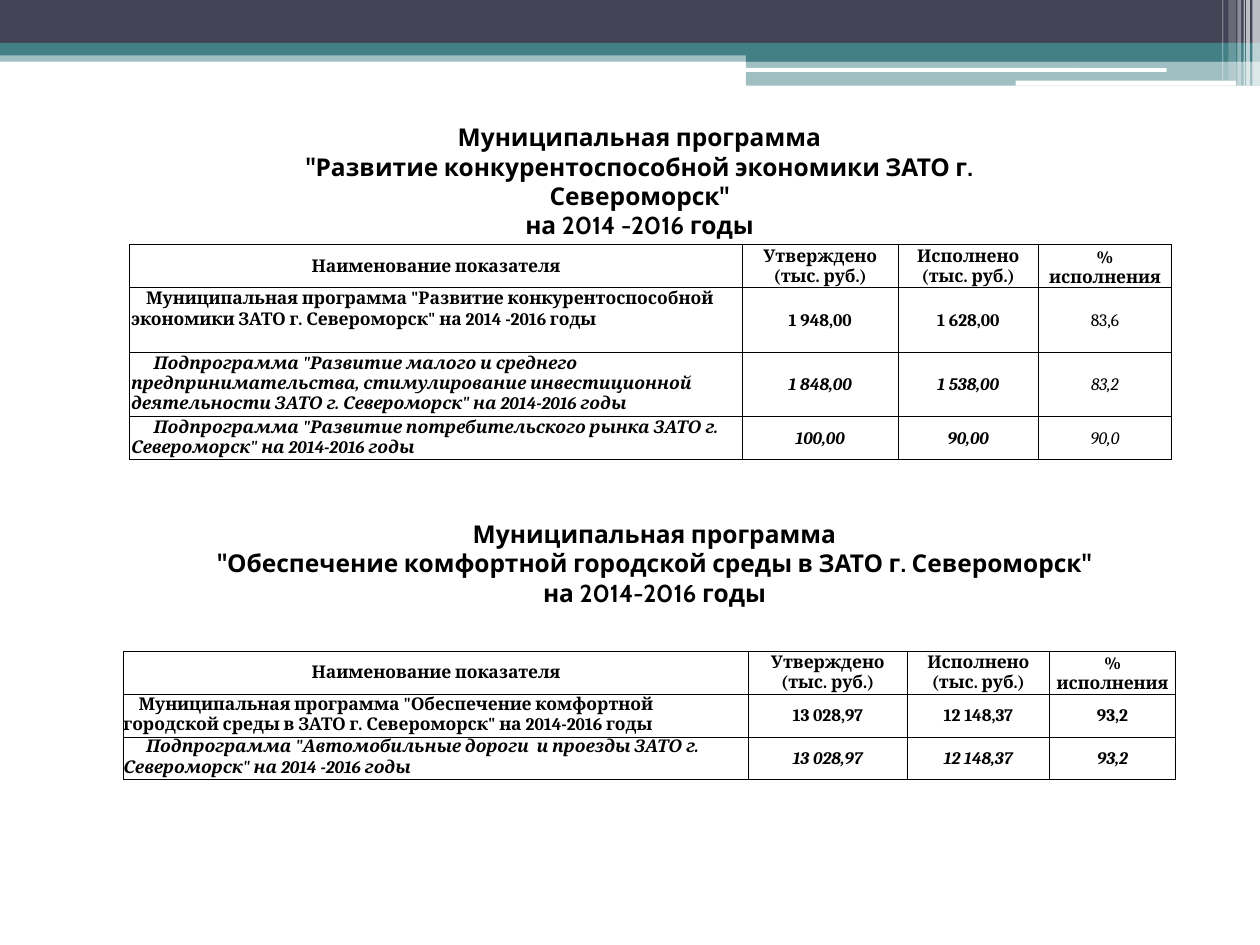
from dataclasses import dataclass

from lxml import etree
from pptx import Presentation
from pptx.dml.color import RGBColor
from pptx.enum.shapes import MSO_SHAPE
from pptx.enum.text import MSO_ANCHOR, PP_ALIGN
from pptx.oxml.ns import qn
from pptx.util import Inches, Pt

RECT, ROUND = MSO_SHAPE.RECTANGLE, MSO_SHAPE.ROUNDED_RECTANGLE
CENTER, LEFT = PP_ALIGN.CENTER, PP_ALIGN.LEFT
TOP, MIDDLE, BOTTOM = MSO_ANCHOR.TOP, MSO_ANCHOR.MIDDLE, MSO_ANCHOR.BOTTOM


@dataclass(frozen=True)
class Theme:
    dark: str = "424456"
    teal: str = "438086"
    white: str = "FFFFFF"
    ink: str = "000000"
    title_font: str = "Cabin"
    title_size: float = 14
    table_font: str = "Cambria"
    table_size: float = 10
    border: float = 0.5


theme = Theme()
deck = Presentation()
deck.slide_width, deck.slide_height = Inches(10), Inches(7.5)
page = deck.slides.add_slide(deck.slide_layouts[6])

# The page is a grid of 100 columns by 75 rows
COL, ROW = deck.slide_width / 100, deck.slide_height / 75


def grid(left, top, width, height):
    return [round(n * unit) for n, unit in zip((left, top, width, height), (COL, ROW) * 2)]


def style_text(frame, font, size, bold=True, italic=False, align=CENTER):
    for para in frame.paragraphs:
        para.alignment = align
        for span in para.runs:
            span.font.name, span.font.size = font, Pt(size)
            span.font.bold, span.font.italic = bold, italic
            span.font.color.rgb = RGBColor.from_string(theme.ink)


# Header bands: kind, place on the grid, colour, opacity in percent
bands = [
    (RECT, (0, 4, 100, 0.9), theme.teal, 50),
    (RECT, (0, 0, 100, 3.4), theme.dark, 100),
    (RECT, (0, 3.4, 100, 1), theme.teal, 100),
    (RECT, (59.2, 3.9, 40.8, 1), theme.teal, 100),
    (RECT, (59.2, 4.8, 40.8, 2), theme.teal, 50),
    (ROUND, (59.1, 5.4, 33.5, 0.3), theme.white, 100),
    (ROUND, (80.6, 6.4, 17.5, 0.4), theme.white, 100),
]
# Light stripes at the right edge: left, width, height, opacity
stripes = [
    (99.4, 0.6, 6.8, 65), (98.9, 0.3, 6.8, 65), (98.7, 0.1, 6.8, 60),
    (98.2, 0.3, 6.8, 40), (97.5, 0.6, 6.4, 20), (97, 0.1, 6.4, 30),
]
bands += [(RECT, (left, 0, width, height), theme.white, opacity)
          for left, width, height, opacity in stripes]

for kind, place, color, opacity in bands:
    band = page.shapes.add_shape(kind, *grid(*place))
    band.shadow.inherit = False
    band.line.fill.background()
    band.fill.solid()
    band.fill.fore_color.rgb = RGBColor.from_string(color)
    if opacity < 100:
        tint = band.fill._xPr.find(qn("a:solidFill"))[0]
        etree.SubElement(tint, qn("a:alpha")).set("val", str(opacity * 1000))

titles = [
    ((19.3, 9.2, 62.9, 8.1),
     'Муниципальная программа\n"Развитие конкурентоспособной экономики ЗАТО г. Североморск"\n'
     'на 2014 -2016 годы'),
    ((10.6, 40.7, 82.7, 8.1),
     'Муниципальная программа\n"Обеспечение комфортной городской среды в ЗАТО г. Североморск"\n'
     'на 2014-2016 годы'),
]
for place, text in titles:
    box = page.shapes.add_textbox(*grid(*place))
    box.text_frame.word_wrap = True
    box.text_frame.text = text
    style_text(box.text_frame, theme.title_font, theme.title_size)

header = ("Наименование показателя", "Утверждено\n(тыс. руб.)",
          "Исполнено\n(тыс. руб.)", "% исполнения")
# Left, top, column widths, row heights, cell margin, bold percentages, body rows
tables = [
    (10.3, 19.4, (48.6, 12.4, 11.1, 10.6), (3.4, 5.1, 5.1, 3.4), 0.1, False, [
        ('Муниципальная программа "Развитие конкурентоспособной экономики ЗАТО г. Североморск"'
         ' на 2014 -2016 годы', "1 948,00", "1 628,00", "83,6"),
        ('Подпрограмма "Развитие малого и среднего предпринимательства, стимулирование '
         'инвестиционной деятельности ЗАТО г. Североморск" на 2014-2016 годы',
         "1 848,00", "1 538,00", "83,2"),
        ('Подпрограмма "Развитие потребительского рынка ЗАТО г. Североморск" на 2014-2016 годы',
         "100,00", "90,00", "90,0"),
    ]),
    (9.8, 51.7, (49.6, 12.6, 11.3, 10), (3.4, 3.4, 3.4), 0, True, [
        ('Муниципальная программа "Обеспечение комфортной городской среды в ЗАТО г. Североморск"'
         ' на 2014-2016 годы', "13 028,97", "12 148,37", "93,2"),
        ('Подпрограмма "Автомобильные дороги  и проезды ЗАТО г. Североморск" на 2014 -2016 годы',
         "13 028,97", "12 148,37", "93,2"),
    ]),
]
for left, top, widths, heights, margin, bold_percent, body in tables:
    place = grid(left, top, sum(widths), sum(heights))
    table = page.shapes.add_table(len(heights), len(widths), *place).table
    for column, width in zip(table.columns, widths):
        column.width = round(width * COL)
    for row, height in zip(table.rows, heights):
        row.height = round(height * ROW)

    for r, texts in enumerate([header] + body):
        for c, text in enumerate(texts):
            is_name = r > 0 and c == 0
            is_percent = r > 0 and c == 3
            cell = table.cell(r, c)
            cell.text_frame.text = text
            style_text(cell.text_frame, theme.table_font, theme.table_size,
                       bold=bold_percent or not is_percent, italic=r > 1,
                       align=LEFT if is_name else CENTER)
            cell.margin_left = cell.margin_right = cell.margin_top = round(margin * COL)
            cell.margin_bottom = 0
            cell.vertical_anchor = TOP if is_name else MIDDLE
            if r == 0 and c == 3:
                cell.vertical_anchor = BOTTOM
            if is_name:
                first_line = round((1.2 if r == 1 else 1.8) * COL)
                para = cell.text_frame.paragraphs[0]
                para._p.get_or_add_pPr().set("indent", str(first_line))

            properties = cell._tc.get_or_add_tcPr()
            for side in ("lnL", "lnR", "lnT", "lnB"):
                line = etree.SubElement(properties, qn(f"a:{side}"), w=str(Pt(theme.border)))
                ink = etree.SubElement(line, qn("a:solidFill"))
                etree.SubElement(ink, qn("a:srgbClr"), val=theme.ink)
            cell.fill.background()

deck.save("out.pptx")
